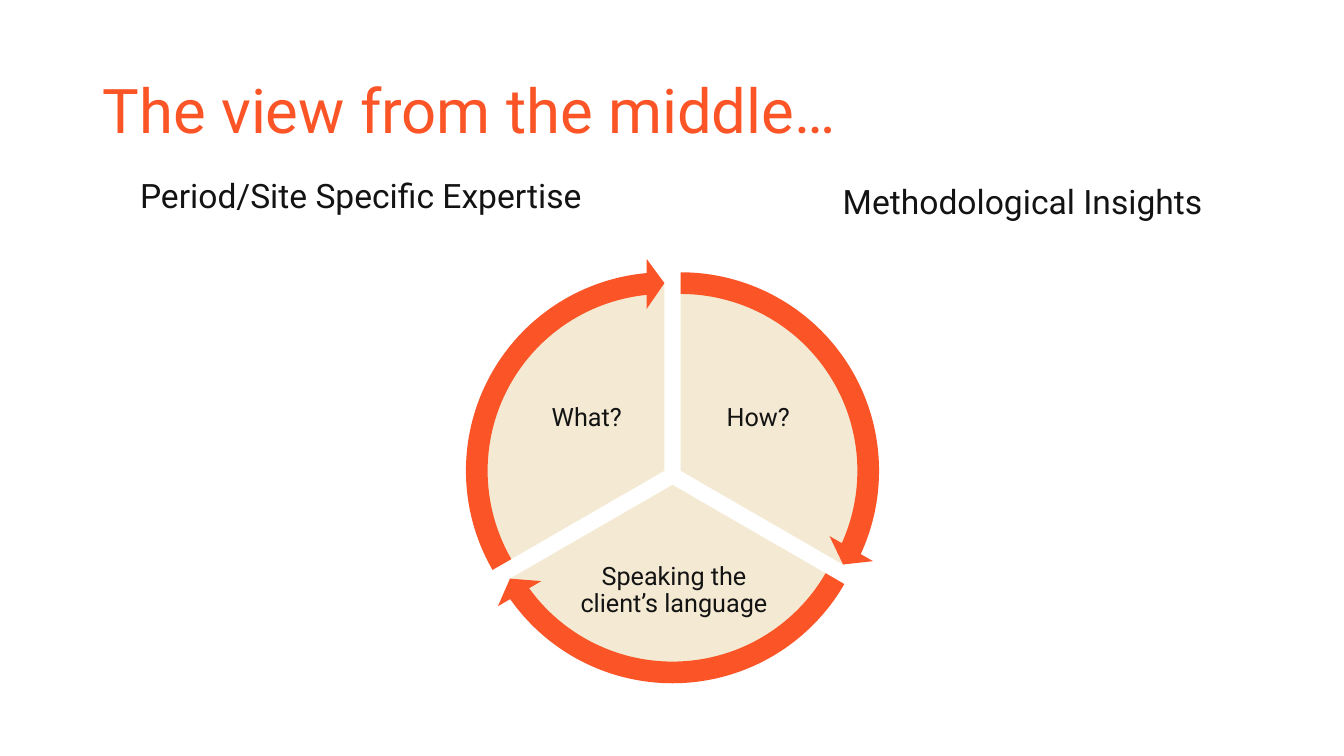
import pptx
import pptx.dml.color
import pptx.enum.shapes
import pptx.enum.text
import pptx.util

Inches = pptx.util.Inches
SHAPE = pptx.enum.shapes.MSO_SHAPE
ALIGN = pptx.enum.text.PP_ALIGN
ANCHOR = pptx.enum.text.MSO_ANCHOR

ORANGE = pptx.dml.color.RGBColor(0xFA, 0x54, 0x27)
CREAM = pptx.dml.color.RGBColor(0xF4, 0xEA, 0xD3)
INK = pptx.dml.color.RGBColor(0x13, 0x13, 0x13)

PIE_SIZE = 3.75
ARROW_SIZE = 4.22
ANGLE_UNIT = 0.6  # adjustment value per degree


class SlideBuilder:
    font = "Roboto"

    def __init__(self, slide):
        self.slide = slide

    def text(self, words, box, size, color=INK, align=ALIGN.LEFT,
             anchor=ANCHOR.TOP, spacing=1.0, inset=None):
        frame = self.slide.shapes.add_textbox(*map(Inches, box)).text_frame
        frame.word_wrap = True
        frame.vertical_anchor = anchor
        if inset is not None:
            frame.margin_left = frame.margin_right = Inches(inset)
            frame.margin_top = frame.margin_bottom = Inches(inset)
        frame.text = words
        paragraph = frame.paragraphs[0]
        paragraph.alignment = align
        paragraph.line_spacing = spacing
        font = paragraph.runs[0].font
        font.name = self.font
        font.size = pptx.util.Pt(size)
        font.color.rgb = color

    def round_shape(self, preset, center, size, color, adjustments):
        left, top = (Inches(c - size / 2) for c in center)
        shape = self.slide.shapes.add_shape(
            preset, left, top, Inches(size), Inches(size))
        shape.shadow.inherit = False
        shape.fill.solid()
        shape.fill.fore_color.rgb = color
        shape.line.fill.background()
        for index, value in enumerate(adjustments):
            shape.adjustments[index] = value

    def sector(self, center, start):
        angles = [start * ANGLE_UNIT, (start + 120) % 360 * ANGLE_UNIT]
        self.round_shape(SHAPE.PIE, center, PIE_SIZE, CREAM, angles)

    def cycle_arrow(self, center, start):
        head = (start + 114.54) % 360 * ANGLE_UNIT
        self.round_shape(SHAPE.CIRCULAR_ARROW, center, ARROW_SIZE, ORANGE,
                         [0.051, 3.275, head, start * ANGLE_UNIT, 0.059])


def main():
    deck = pptx.Presentation()
    deck.slide_width = Inches(13.33)
    deck.slide_height = Inches(7.5)
    builder = SlideBuilder(deck.slides.add_slide(deck.slide_layouts[6]))

    # Title and the two headings
    builder.text("The view from the middle…", (0.92, 0.4, 11.5, 1.45), 44,
                 ORANGE, anchor=ANCHOR.MIDDLE, spacing=0.9)
    builder.text("Period/Site Specific Expertise", (1.29, 1.69, 6.72, 0.5), 24)
    builder.text("Methodological Insights", (8.26, 1.75, 5.48, 0.5), 24)

    # Cycle: label, label box, sector center, start angle in degrees
    cycle = [
        ("How?", (6.85, 3.59, 1.34, 1.12), (6.75, 4.67), 270),
        ("Speaking the client’s language", (5.68, 5.37, 2.01, 0.98),
         (6.67, 4.81), 30),
        ("What?", (5.15, 3.59, 1.34, 1.12), (6.59, 4.67), 150),
    ]
    for label, box, center, start in cycle:
        builder.sector(center, start)
        builder.text(label, box, 18, align=ALIGN.CENTER,
                     anchor=ANCHOR.MIDDLE, spacing=0.9, inset=0.03)

    # Arrows around the cycle
    for _, _, center, start in cycle:
        builder.cycle_arrow(center, start)

    deck.save("out.pptx")


if __name__ == "__main__":
    main()
